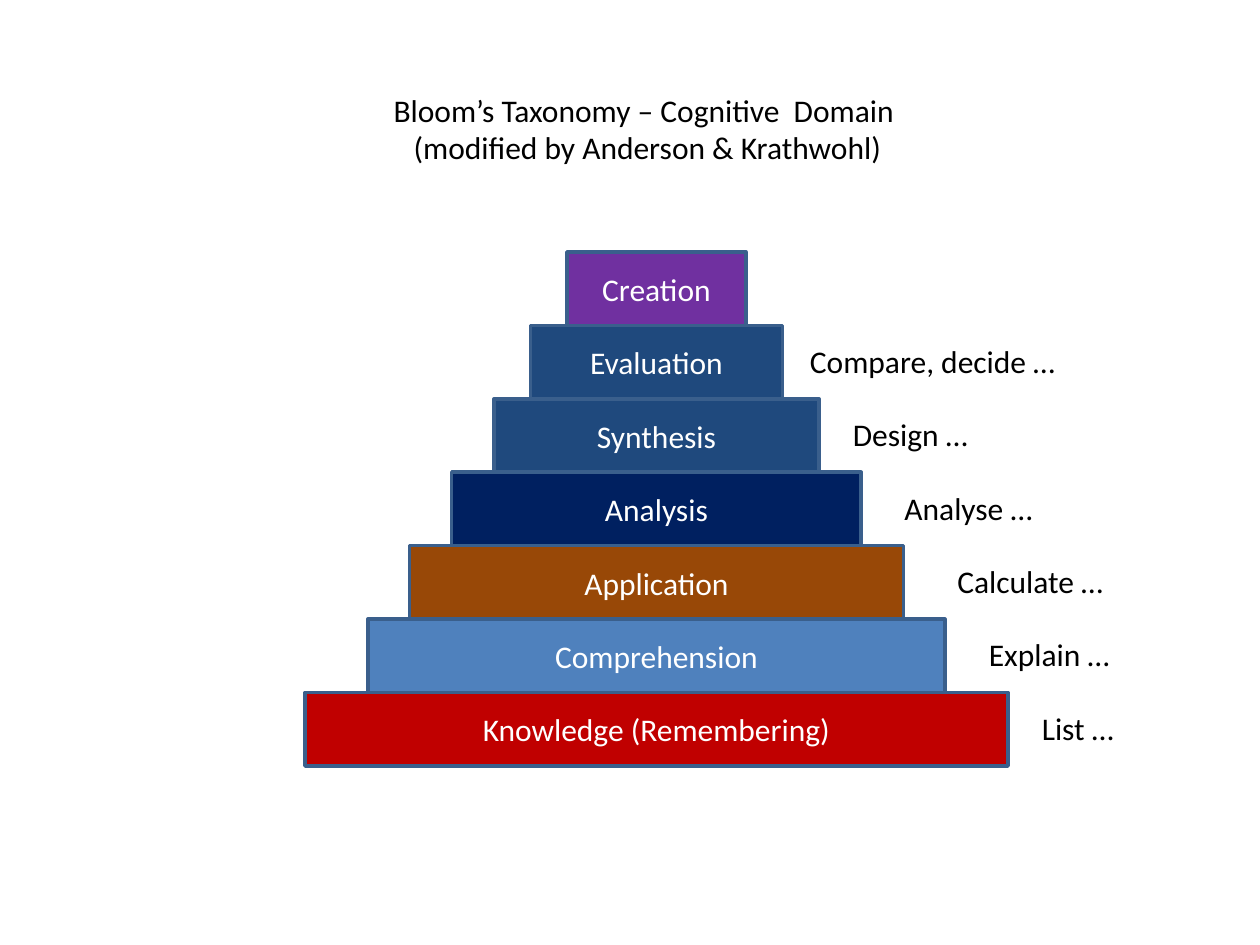
from pptx import Presentation
from pptx.dml.color import RGBColor
from pptx.enum import shapes, text
from pptx.util import Inches, Pt

BLACK = RGBColor(0x00, 0x00, 0x00)
WHITE = RGBColor(0xFF, 0xFF, 0xFF)
OUTLINE = RGBColor(0x3A, 0x5F, 0x8C)
PURPLE = RGBColor(0x70, 0x30, 0xA0)
BLUE = RGBColor(0x1F, 0x49, 0x7D)
NAVY = RGBColor(0x00, 0x20, 0x60)
BROWN = RGBColor(0x98, 0x48, 0x07)
LIGHT_BLUE = RGBColor(0x4F, 0x81, 0xBD)
RED = RGBColor(0xC0, 0x00, 0x00)

# Level, fill, width of step, example verbs, left and width of the verbs
LEVELS = [
    ("Creation", PURPLE, 1.42, None, 0, 0),
    ("Evaluation", BLUE, 2, "Compare, decide …", 6.33, 2.17),
    ("Synthesis", BLUE, 2.58, "Design …", 6.67, 1.12),
    ("Analysis", NAVY, 3.25, "Analyse …", 7.08, 1.23),
    ("Application", BROWN, 3.92, "Calculate …", 7.5, 1.37),
    ("Comprehension", LIGHT_BLUE, 4.58, "Explain …", 7.75, 1.17),
    ("Knowledge (Remembering)", RED, 5.58, "List …", 8.17, 0.79),
]


def write(frame, lines, color, align):
    frame.text = "\n".join(lines)
    for para in frame.paragraphs:
        para.alignment = align
        para.font.name = "Calibri"
        para.font.size = Pt(18)
        para.font.color.rgb = color


def add_label(page, lines, left, top, width, height, align=text.PP_ALIGN.LEFT):
    box = page.shapes.add_textbox(Inches(left), Inches(top), Inches(width), Inches(height))
    write(box.text_frame, lines, BLACK, align)
    box.text_frame.word_wrap = False
    box.text_frame.auto_size = text.MSO_AUTO_SIZE.SHAPE_TO_FIT_TEXT


def add_step(page, name, fill, left, top, width, height):
    step = page.shapes.add_shape(shapes.MSO_SHAPE.RECTANGLE, Inches(left), Inches(top),
                                 Inches(width), Inches(height))
    step.shadow.inherit = False
    step.fill.solid()
    step.fill.fore_color.rgb = fill
    step.line.color.rgb = OUTLINE
    step.line.width = Pt(2)
    step.text_frame.vertical_anchor = text.MSO_ANCHOR.MIDDLE
    write(step.text_frame, [name], WHITE, text.PP_ALIGN.CENTER)


def add_pyramid(page, center, top, height):
    """Stack the levels around a centre line, with example verbs at the right."""
    step_height = height / len(LEVELS)
    for row, (name, fill, width, verbs, verbs_left, verbs_width) in enumerate(LEVELS):
        step_top = top + row * step_height
        add_step(page, name, fill, center - width / 2, step_top, width, step_height)
        if verbs:
            add_label(page, [verbs], verbs_left, step_top + 0.08, verbs_width, 0.4)


def main():
    deck = Presentation()
    deck.slide_width, deck.slide_height = Inches(10), Inches(7.5)
    page = deck.slides.add_slide(deck.slide_layouts[6])
    add_label(page, ["Bloom’s Taxonomy – Cognitive  Domain", " (modified by Anderson & Krathwohl)"],
              3, 0.67, 4.22, 0.71, text.PP_ALIGN.CENTER)
    add_pyramid(page, center=5.21, top=2, height=4.08)
    deck.save("out.pptx")


if __name__ == "__main__":
    main()
